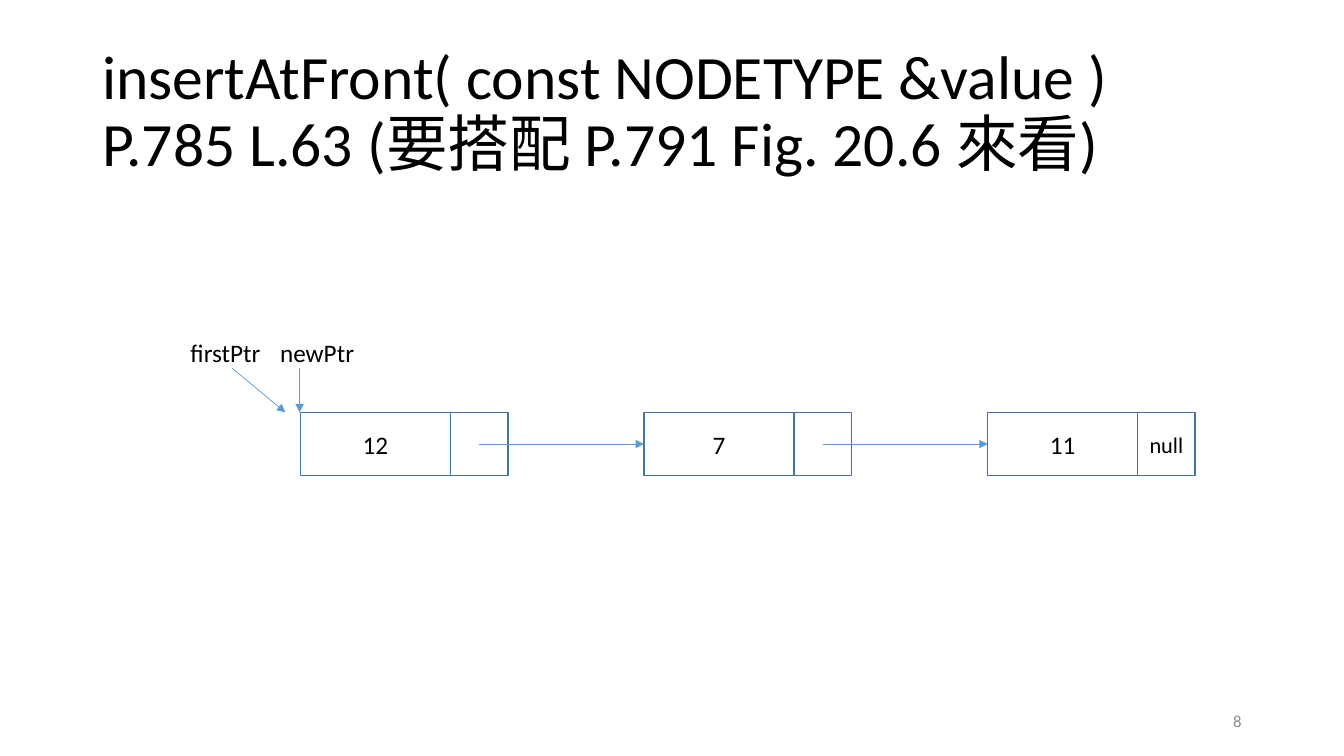
from lxml.etree import SubElement
from pptx import Presentation
from pptx.dml.color import RGBColor
from pptx.enum.shapes import MSO_CONNECTOR, MSO_SHAPE
from pptx.enum.text import MSO_ANCHOR, PP_ALIGN
from pptx.oxml.ns import qn
from pptx.util import Cm, Pt

BLACK = RGBColor(0x00, 0x00, 0x00)
GREY = RGBColor(0x8C, 0x8C, 0x8C)
NODE_BLUE = RGBColor(0x43, 0x73, 0x9E)
ARROW_BLUE = RGBColor(0x5B, 0x9B, 0xD5)
FONT = "Calibri"

VALUE_WIDTH = Cm(3.78)
NODE_HEIGHT = Cm(1.6)
NODE_PITCH = Cm(8.66)


def add_run(paragraph, text, size, color=BLACK):
    run = paragraph.add_run()
    run.text = text
    run.font.name = FONT
    run.font.size = Pt(size)
    run.font.color.rgb = color


def add_label(slide, lines, left, top, width, height, size, color=BLACK,
              align=PP_ALIGN.LEFT, anchor=MSO_ANCHOR.TOP, spacing=1.0):
    """Place a text box whose lines share one paragraph."""
    frame = slide.shapes.add_textbox(left, top, width, height).text_frame
    frame.word_wrap = True
    frame.vertical_anchor = anchor
    paragraph = frame.paragraphs[0]
    paragraph.alignment = align
    paragraph.line_spacing = spacing
    for index, line in enumerate(lines):
        if index:
            paragraph.add_line_break()
        add_run(paragraph, line, size, color)


def add_arrow(slide, start_x, start_y, end_x, end_y):
    arrow = slide.shapes.add_connector(
        MSO_CONNECTOR.STRAIGHT, start_x, start_y, end_x, end_y)
    arrow.line.color.rgb = ARROW_BLUE
    arrow.line.width = Pt(0.5)
    SubElement(arrow.line._get_or_add_ln(), qn("a:tailEnd"), type="triangle")
    SubElement(arrow._element.spPr, qn("a:effectLst"))
    return arrow


def add_cell(slide, text, left, top, width, size):
    cell = slide.shapes.add_shape(
        MSO_SHAPE.RECTANGLE, left, top, width, NODE_HEIGHT)
    cell.shadow.inherit = False
    cell.fill.background()
    cell.line.color.rgb = NODE_BLUE
    cell.line.width = Pt(1)
    frame = cell.text_frame
    frame.margin_left = frame.margin_right = 0
    frame.vertical_anchor = MSO_ANCHOR.MIDDLE
    if text:
        frame.paragraphs[0].alignment = PP_ALIGN.CENTER
        add_run(frame.paragraphs[0], text, size)
    return cell


def add_node(slide, value, link, left, top):
    """Draw a value cell and its link cell side by side; return both."""
    return (add_cell(slide, value, left, top, VALUE_WIDTH, 18),
            add_cell(slide, link, left + VALUE_WIDTH, top, Cm(1.45), 16))


def add_linked_list(slide, left, top):
    nodes = [add_node(slide, value, link, left + index * NODE_PITCH, top)
             for index, (value, link) in enumerate(
                 [("12", ""), ("7", ""), ("11", "null")])]
    middle = top + NODE_HEIGHT // 2
    for (_, link_cell), (next_value, _) in zip(nodes, nodes[1:]):
        arrow = add_arrow(slide, link_cell.left + link_cell.width // 2, middle,
                          next_value.left, middle)
        arrow.end_connect(next_value, 1)


def add_pointers(slide, left, top):
    """Draw both pointer names and their arrows above the corner at left, top."""
    pointers = [("firstPtr", Cm(-3.02), Cm(-1.73), Cm(-0.38)),
                ("newPtr", Cm(-0.76), Cm(-0.02), Cm(-0.02))]
    for name, label_dx, start_dx, end_dx in pointers:
        add_label(slide, [name], left + label_dx, top - Cm(2.01),
                  Cm(2.62), Cm(1.02), 18)
        add_arrow(slide, left + start_dx, top - Cm(1.12), left + end_dx, top)


def add_title(slide, left, top, width, height):
    add_label(slide, ["insertAtFront( const NODETYPE &value ) ",
                      "P.785 L.63 (要搭配 P.791 Fig. 20.6 來看)"],
              left, top, width, height, 44,
              anchor=MSO_ANCHOR.MIDDLE, spacing=0.9)


def add_page_number(slide, left, top, width, height):
    add_label(slide, ["8"], left, top, width, height, 12, GREY,
              PP_ALIGN.RIGHT, MSO_ANCHOR.MIDDLE)


def main():
    deck = Presentation()
    deck.slide_width, deck.slide_height = Cm(33.87), Cm(19.05)
    slide = deck.slides.add_slide(deck.slide_layouts[6])
    list_left, list_top = Cm(7.57), Cm(10.39)
    add_title(slide, Cm(2.33), Cm(1.01), Cm(29.21), Cm(3.68))
    add_linked_list(slide, list_left, list_top)
    add_pointers(slide, list_left, list_top)
    add_page_number(slide, Cm(23.92), Cm(17.66), Cm(7.62), Cm(1.01))
    deck.save("out.pptx")


if __name__ == "__main__":
    main()
